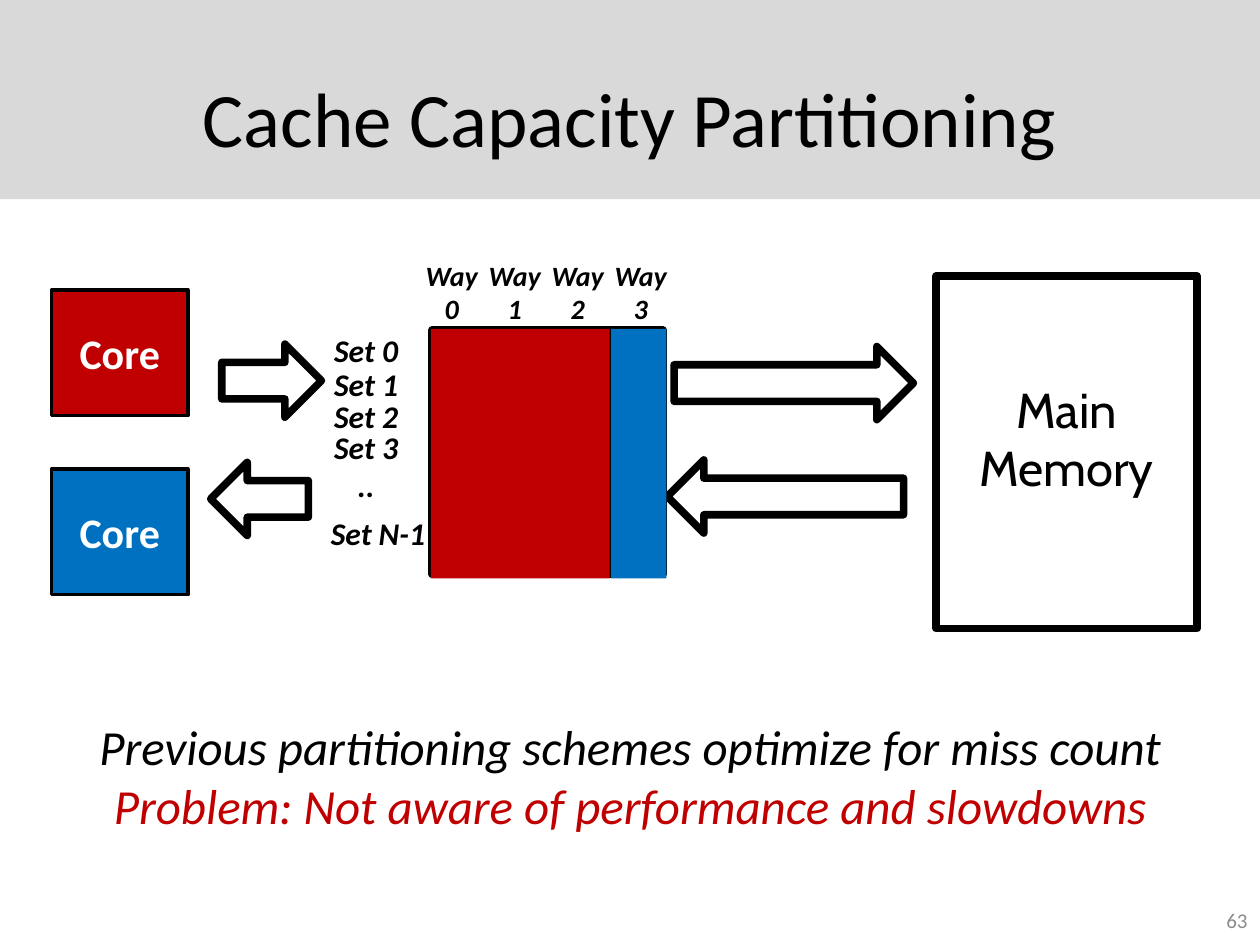
from lxml.etree import SubElement
from pptx import Presentation
from pptx.dml.color import RGBColor
from pptx.enum.shapes import MSO_CONNECTOR, MSO_SHAPE
from pptx.enum.text import MSO_ANCHOR, PP_ALIGN
from pptx.oxml.ns import qn
from pptx.util import Pt

BLACK, WHITE, RED, BLUE = "000000", "FFFFFF", "C00000", "0070C0"
color = RGBColor.from_string

prs = Presentation()
prs.slide_width, prs.slide_height = Pt(720), Pt(540)
slide = prs.slides.add_slide(prs.slide_layouts[6])


def add_block(kind, left, top, width, height, fill=None, line_width=None):
    block = slide.shapes.add_shape(kind, Pt(left), Pt(top), Pt(width), Pt(height))
    block.shadow.inherit = False
    if fill:
        block.fill.solid()
        block.fill.fore_color.rgb = color(fill)
    else:
        block.fill.background()
    if line_width:
        block.line.color.rgb = color(BLACK)
        block.line.width = Pt(line_width)
        SubElement(block.line._get_or_add_ln(), qn("a:round"))
    else:
        block.line.fill.background()
    return block


def add_text(lines, left, top, width, height, size, colors=(BLACK,), font="Calibri",
             bold=False, italic=False, align=PP_ALIGN.CENTER, anchor=MSO_ANCHOR.TOP, block=None):
    """Write one paragraph per line, in a new text box unless a block is given."""
    holder = block or slide.shapes.add_textbox(Pt(left), Pt(top), Pt(width), Pt(height))
    frame = holder.text_frame
    frame.word_wrap = True
    frame.vertical_anchor = anchor
    frame.text = "\n".join(lines)
    for number, paragraph in enumerate(frame.paragraphs):
        paragraph.alignment = align
        paragraph.font.name = font
        paragraph.font.size = Pt(size)
        paragraph.font.bold = bold
        paragraph.font.italic = italic
        paragraph.font.color.rgb = color(colors[number % len(colors)])


# Title band and slide number
add_block(MSO_SHAPE.RECTANGLE, 0, 0, 720, 113.76, "D9D9D9")
add_text(["Cache Capacity Partitioning"], 36, 21.6, 648, 90, 44, anchor=MSO_ANCHOR.MIDDLE)
add_text(["63"], 552.24, 511.2, 167.76, 28.8, 12, ["8C8C8C"],
         align=PP_ALIGN.RIGHT, anchor=MSO_ANCHOR.MIDDLE)

# Main memory
add_block(MSO_SHAPE.RECTANGLE, 535, 157.7, 149, 201.6, line_width=4.32)
add_text(["Main Memory"], 537, 213.1, 144.7, 74.9, 28, font="Cabin")

# Arrows between cores, cache and memory
for direction, left, top, width in [
    (MSO_SHAPE.RIGHT_ARROW, 385.2, 198, 136.8),
    (MSO_SHAPE.LEFT_ARROW, 381.3, 262.8, 135),
    (MSO_SHAPE.RIGHT_ARROW, 126.7, 196.6, 57),
    (MSO_SHAPE.LEFT_ARROW, 120.4, 264.2, 55.8),
]:
    add_block(direction, left, top, width, 41.8, line_width=4.32)

# Cores
for top, fill in [(165.6, RED), (267.9, BLUE)]:
    core = add_block(MSO_SHAPE.RECTANGLE, 29.5, top, 77.8, 72, fill, 2)
    add_text(["Core"], 0, 0, 0, 0, 24, [WHITE], bold=True,
             anchor=MSO_ANCHOR.MIDDLE, block=core)

# Cache outline and the divider between the partitions
add_block(MSO_SHAPE.RECTANGLE, 247, 188.6, 131.8, 139.7, line_width=4.32)
divider = slide.shapes.add_connector(MSO_CONNECTOR.STRAIGHT, Pt(348), Pt(190.8), Pt(348), Pt(329.8))
divider.line.color.rgb = color(BLACK)
divider.line.width = Pt(2)
SubElement(divider._element.spPr, qn("a:effectLst"))

# Set labels
for lines, left, top, width, height in [
    (["Set 0"], 179.3, 185.8, 59.8, 28.8),
    (["Set 1"], 179.3, 205.2, 59.8, 28.8),
    (["Set 2"], 179.3, 223.2, 59.8, 28.8),
    (["Set 3", ".."], 179.3, 241.2, 59.8, 51.1),
    (["Set N-1"], 180, 290.2, 72, 28.8),
]:
    add_text(lines, left, top, width, height, 18, bold=True, italic=True)

# Way labels
for way in range(4):
    add_text(["Way", str(way)], 228.2 + 36 * way, 144, 59.8, 46.1, 16, bold=True, italic=True)

# Cache partitions: three ways for the red core, one for the blue core
for left, width, fill in [(246.2, 102.2, RED), (349.2, 31.7, BLUE)]:
    add_block(MSO_SHAPE.RECTANGLE, left, 187.9, width, 142.6, fill)

# Takeaway
add_text(["Previous partitioning schemes optimize for miss count",
          "Problem: Not aware of performance and slowdowns"],
         0, 406.1, 720, 74.9, 28, [BLACK, RED], italic=True)

prs.save("out.pptx")
